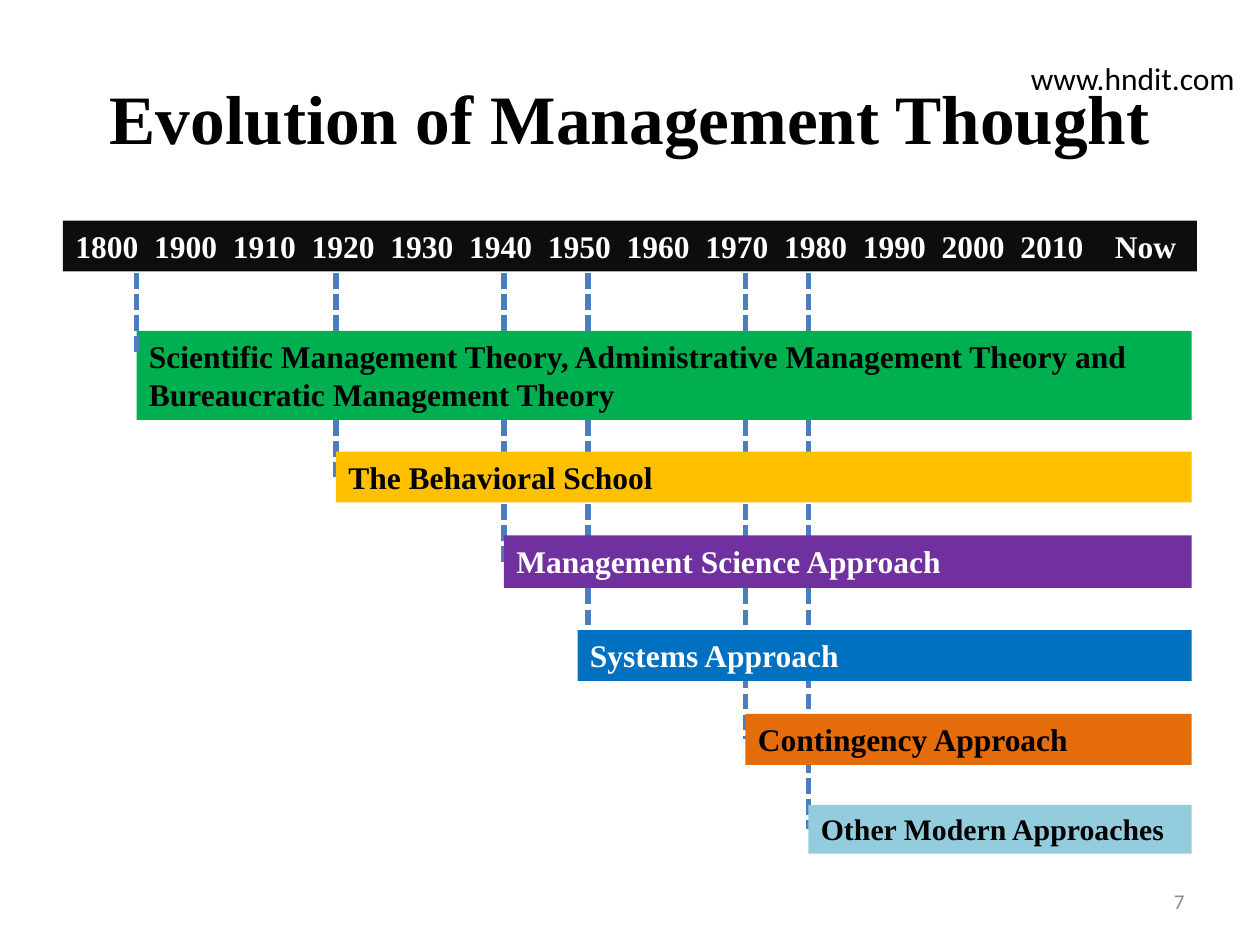
import pptx
import pptx.util
import pptx.dml.color
import pptx.enum.dml
import pptx.enum.shapes
import pptx.enum.text
import pptx.oxml.ns
import lxml.etree

SERIF = "Times New Roman"
ALIGN = pptx.enum.text.PP_ALIGN
ANCHOR = pptx.enum.text.MSO_ANCHOR
FIT = pptx.enum.text.MSO_AUTO_SIZE
qn = pptx.oxml.ns.qn


def rgb(value):
    return pptx.dml.color.RGBColor.from_string(value)


def write(sp, text, size=18, font=SERIF, color="000000", bold=True,
          align=ALIGN.LEFT, anchor=ANCHOR.TOP, fit=FIT.SHAPE_TO_FIT_TEXT, tabs=()):
    tf = sp.text_frame
    tf.word_wrap = True
    tf.auto_size = fit
    tf.vertical_anchor = anchor
    p = tf.paragraphs[0]
    p.alignment = align
    if tabs:
        stops = lxml.etree.SubElement(p._p.get_or_add_pPr(), qn("a:tabLst"))
        for pos in tabs:
            lxml.etree.SubElement(stops, qn("a:tab"), pos=str(int(pos)), algn="l")
    r = p.add_run()
    r.text = text
    r.font.size = pptx.util.Pt(size)
    r.font.name = font
    r.font.bold = bold
    r.font.color.rgb = rgb(color)


prs = pptx.Presentation()
prs.slide_width = pptx.util.Inches(10)
prs.slide_height = pptx.util.Inches(7.5)
s = prs.slides.add_slide(prs.slide_layouts[5])
col = prs.slide_width // 120
row = prs.slide_height // 90

years = ["1800"] + [str(y) for y in range(1900, 2011, 10)] + ["Now"]
year_tabs = [7.5 * col * i for i in range(1, 13)] + [99 * col]
right = 113.5
schools = [
    (13, 13, 31.5, 8.5, "00B050", "000000", 18, "Scientific Management Theory, "
     "Administrative Management Theory and Bureaucratic Management Theory"),
    (32, 32, 43, 4.85, "FFC000", "000000", 18, "The Behavioral School"),
    (48, 48, 51, 5, "7030A0", "FFFFFF", 18, "Management Science Approach"),
    (56, 55, 60, 4.85, "0070C0", "FFFFFF", 18, "Systems Approach"),
    (71, 71, 68, 4.85, "E46C0A", "000000", 18, "Contingency Approach"),
    (77, 77, 76.65, 4.65, "93CDDD", "000000", 17, "Other Modern Approaches"),
]

for x, left, top, height, *rest in reversed(schools):
    line = s.shapes.add_connector(
        pptx.enum.shapes.MSO_CONNECTOR.STRAIGHT, int(x * col), 26 * row,
        int(x * col), int((top + min(height, 5) / 2) * row))
    line.line.color.rgb = rgb("4B7EBC")
    line.line.width = pptx.util.Pt(3)
    line.line.dash_style = pptx.enum.dml.MSO_LINE.SQUARE_DOT
    lxml.etree.SubElement(line.element.spPr, qn("a:effectLst"))

bars = [(6, 21, 108, 4.85, "0D0D0D", "FFFFFF", 18, "\t".join(years), year_tabs)]
for x, left, top, height, fill, color, size, text in schools:
    bars.append((left, top, right - left, height, fill, color, size, text, ()))

for left, top, width, height, fill, color, size, text, tabs in bars:
    sp = s.shapes.add_shape(
        pptx.enum.shapes.MSO_SHAPE.RECTANGLE, int(left * col), int(top * row),
        int(width * col), int(height * row))
    sp.shadow.inherit = False
    sp.fill.solid()
    sp.fill.fore_color.rgb = rgb(fill)
    sp.line.fill.background()
    write(sp, text, size=size, color=color, tabs=tabs)

line.element.getparent().append(line.element)

title = s.shapes.title
title.left, title.top = 6 * col, int(3.6 * row)
title.width, title.height = 108 * col, 15 * row
write(title, "Evolution of Management Thought", size=39.6,
      align=ALIGN.CENTER, anchor=ANCHOR.MIDDLE, fit=FIT.NONE)

number = s.shapes.add_textbox(86 * col, int(83.4 * row), 28 * col, int(4.8 * row))
write(number, "7", size=12, font="Calibri", color="8C8C8C", bold=False,
      align=ALIGN.RIGHT, anchor=ANCHOR.MIDDLE, fit=FIT.NONE)

site = s.shapes.add_textbox(97 * col, 5 * row, 23 * col, int(4.85 * row))
write(site, "www.hndit.com", font="Calibri", bold=False)

prs.save("out.pptx")
